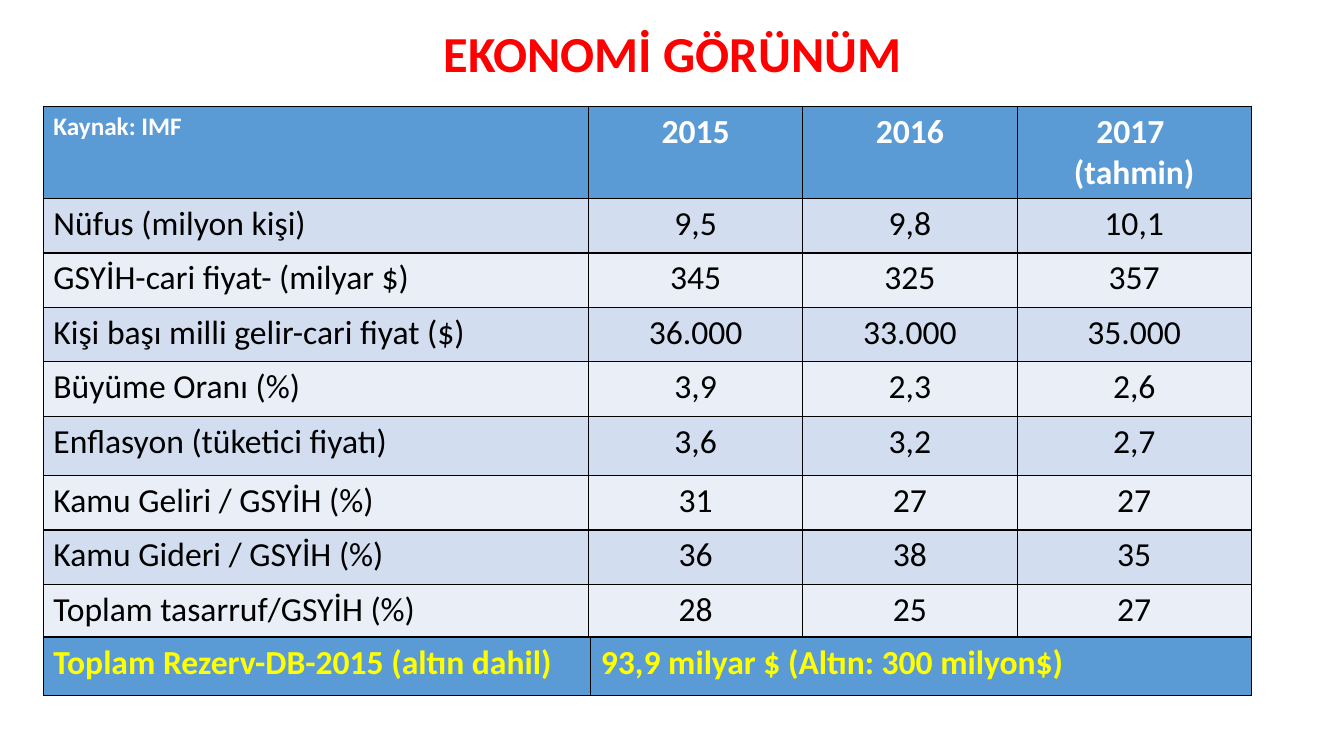
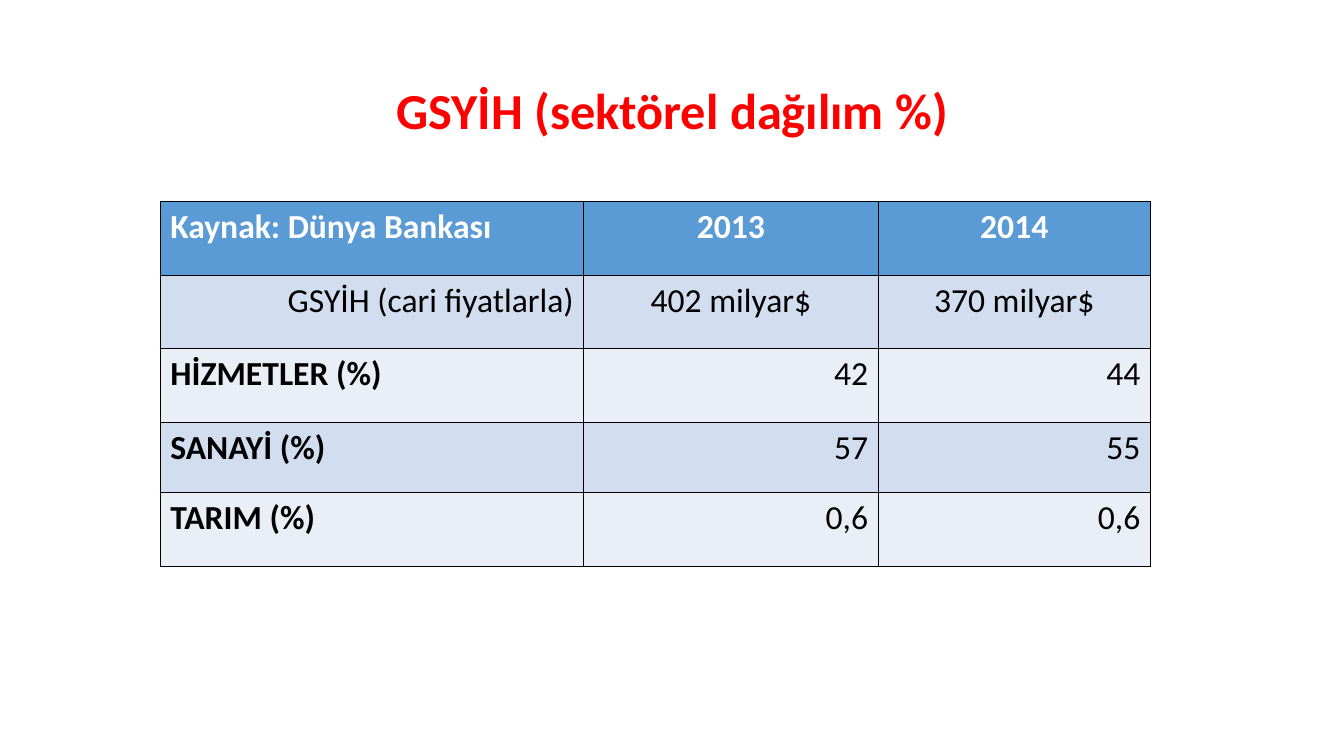
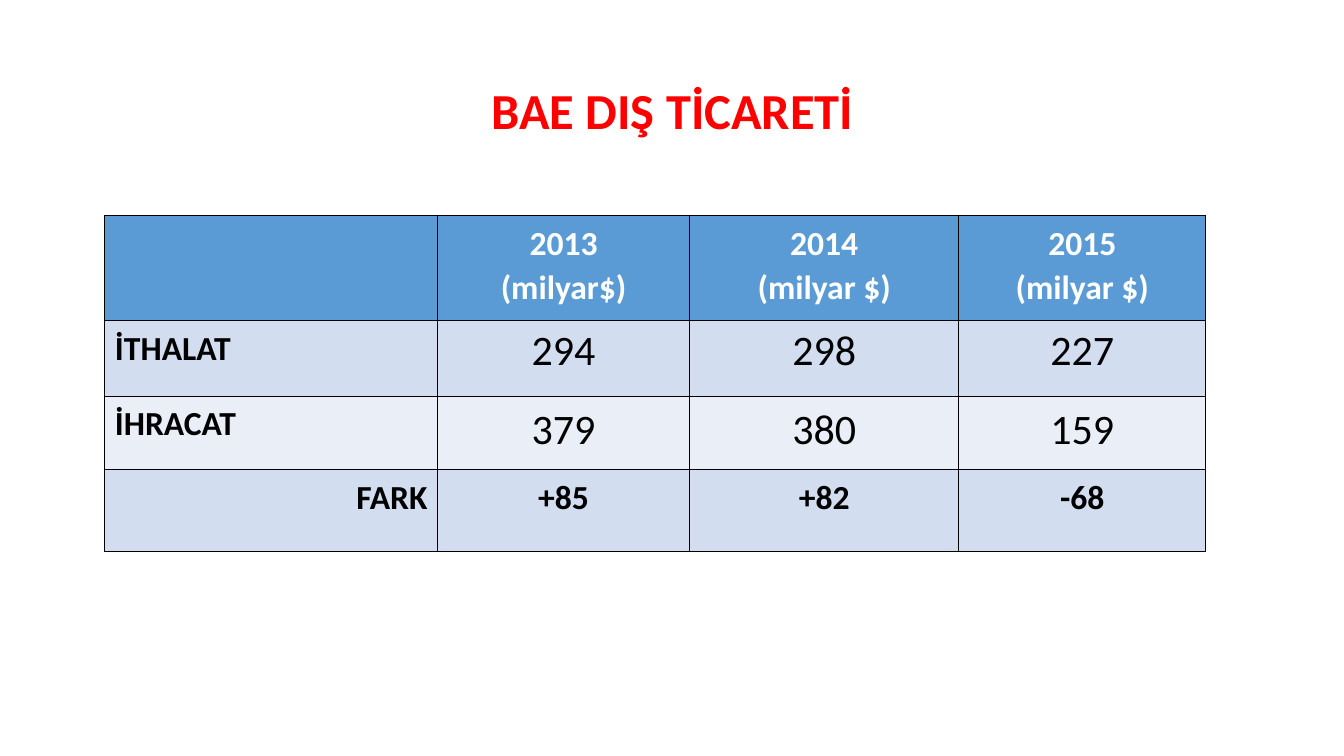
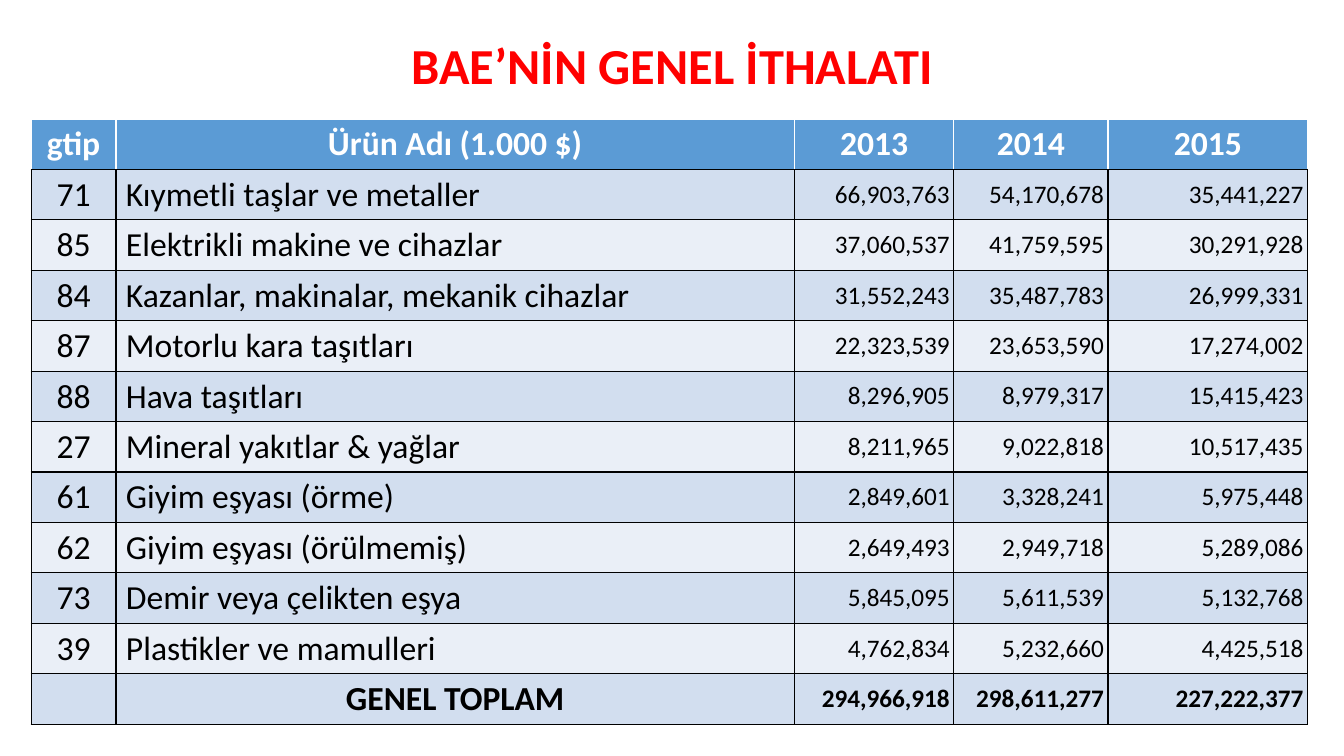
"""Build four slides of economic and trade tables."""
import dataclasses

import lxml.etree
import pptx
import pptx.dml.color
import pptx.enum.text
import pptx.oxml.ns
import pptx.slide
import pptx.table
import pptx.text.text
import pptx.util

Inches = pptx.util.Inches
Pt = pptx.util.Pt
ALIGN = pptx.enum.text.PP_ALIGN
ANCHOR = pptx.enum.text.MSO_ANCHOR

FONT = "Calibri"
COLORS = {
    "title": "FF0000",
    "header": "5B9BD5",
    "dark": "D2DEEF",
    "light": "EAEFF7",
    "black": "000000",
    "white": "FFFFFF",
    "yellow": "FFFF00",
}


@dataclasses.dataclass(frozen=True)
class Style:
    """Format of the text in one cell."""
    align: ALIGN = ALIGN.LEFT
    size: float = 24
    bold: bool = False
    color: str = "black"
    spacing: float = 1.0
    tight: bool = False


@dataclasses.dataclass(frozen=True)
class Row:
    """One table row with a style for each cell."""
    height: float
    fill: str
    cells: tuple[str, ...]
    styles: tuple[Style, ...]
    edge: str = "black"


@dataclasses.dataclass(frozen=True)
class Grid:
    """Place, column widths and rows of one table."""
    left: float
    top: float
    widths: tuple[float, ...]
    rows: list[Row]


@dataclasses.dataclass(frozen=True)
class Page:
    """One slide: its title, the title's place and its tables."""
    title: str
    title_top: float
    title_height: float
    grids: list[Grid]


LEFT = Style()
CENTER = Style(ALIGN.CENTER)
RIGHT = Style(ALIGN.RIGHT)
LEFT_BOLD = Style(bold=True)
HEAD_LEFT = Style(bold=True, color="white")
HEAD = Style(ALIGN.CENTER, bold=True, color="white")
SOURCE = Style(size=18, bold=True, color="white")
RESERVE = Style(bold=True, color="yellow")
TRADE_HEAD = dataclasses.replace(HEAD, spacing=1.07)
TRADE_LABEL = Style(bold=True, spacing=1.07)
TRADE_VALUE = Style(ALIGN.CENTER, size=30)
TRADE_LOOSE = dataclasses.replace(TRADE_VALUE, spacing=1.07)
DIFF_LABEL = dataclasses.replace(TRADE_LABEL, align=ALIGN.RIGHT)
DIFF_VALUE = dataclasses.replace(TRADE_LABEL, align=ALIGN.CENTER)
AMOUNT = Style(ALIGN.RIGHT, size=18, tight=True)
TOTAL = Style(ALIGN.CENTER, bold=True)
TOTAL_AMOUNT = dataclasses.replace(AMOUNT, bold=True)


def rgb(name: str) -> pptx.dml.color.RGBColor:
    """Return the named colour."""
    return pptx.dml.color.RGBColor.from_string(COLORS[name])


def band(index: int) -> str:
    """Return the fill name of a body row."""
    return ("dark", "light")[index % 2]


def write(tf: pptx.text.text.TextFrame, text: str, *, size: float, color: str,
          bold: bool, align: ALIGN, spacing: float) -> None:
    """Write each line of the text as a formatted paragraph."""
    for i, line in enumerate(text.split("\n")):
        p = tf.paragraphs[0] if i == 0 else tf.add_paragraph()
        p.alignment = align
        p.line_spacing = spacing
        r = p.add_run()
        r.text = line
        r.font.name = FONT
        r.font.size = Pt(size)
        r.font.bold = bold
        r.font.color.rgb = rgb(color)


def draw_title(s: pptx.slide.Slide, page: Page) -> None:
    """Draw the slide title."""
    sp = s.shapes.add_textbox(Inches(0.92), Inches(page.title_top),
                              Inches(11.5), Inches(page.title_height))
    tf = sp.text_frame
    tf.word_wrap = True
    tf.vertical_anchor = ANCHOR.MIDDLE
    write(tf, page.title, size=36, color="title", bold=True,
          align=ALIGN.CENTER, spacing=0.9)


def draw_borders(cell: pptx.table._Cell, edge: str) -> None:
    """Give a cell its edge colour, with a black bottom line."""
    qn = pptx.oxml.ns.qn
    tc_pr = cell._tc.get_or_add_tcPr()
    for side, color in (("L", edge), ("R", edge), ("T", edge), ("B", "black")):
        ln = lxml.etree.SubElement(tc_pr, qn(f"a:ln{side}"), w=str(Pt(1)))
        fill = lxml.etree.SubElement(ln, qn("a:solidFill"))
        lxml.etree.SubElement(fill, qn("a:srgbClr"), val=COLORS[color])


def draw_cell(cell: pptx.table._Cell, text: str, style: Style, row: Row) -> None:
    """Format and fill one cell."""
    draw_borders(cell, row.edge)
    cell.fill.solid()
    cell.fill.fore_color.rgb = rgb(row.fill)
    if style.tight:
        cell.vertical_anchor = ANCHOR.MIDDLE
        cell.margin_left = cell.margin_right = Inches(0.04)
        cell.margin_top = cell.margin_bottom = Inches(0.04)
    if text:
        write(cell.text_frame, text, size=style.size, color=style.color,
              bold=style.bold, align=style.align, spacing=style.spacing)


def draw_grid(s: pptx.slide.Slide, grid: Grid) -> None:
    """Draw one table."""
    height = sum(row.height for row in grid.rows)
    table = s.shapes.add_table(
        len(grid.rows), len(grid.widths), Inches(grid.left), Inches(grid.top),
        Inches(sum(grid.widths)), Inches(height)).table
    table.first_row = table.horz_banding = False
    for column, width in zip(table.columns, grid.widths):
        column.width = Inches(width)
    for i, row in enumerate(grid.rows):
        table.rows[i].height = Inches(row.height)
        for j, (text, style) in enumerate(zip(row.cells, row.styles)):
            draw_cell(table.cell(i, j), text, style, row)


OUTLOOK = [
    (0.54, ("Nüfus (milyon kişi)", "9,5", "9,8", "10,1")),
    (0.54, ("GSYİH-cari fiyat- (milyar $)", "345", "325", "357")),
    (0.54, ("Kişi başı milli gelir-cari fiyat ($)", "36.000", "33.000", "35.000")),
    (0.54, ("Büyüme Oranı (%)", "3,9", "2,3", "2,6")),
    (0.59, ("Enflasyon (tüketici fiyatı)", "3,6", "3,2", "2,7")),
    (0.54, ("Kamu Geliri / GSYİH (%)", "31", "27", "27")),
    (0.54, ("Kamu Gideri / GSYİH (%)", "36", "38", "35")),
    (0.53, ("Toplam tasarruf/GSYİH (%)", "28", "25", "27")),
]
IMPORTS = [
    ("71", "Kıymetli taşlar ve metaller", "66,903,763", "54,170,678", "35,441,227"),
    ("85", "Elektrikli makine ve cihazlar", "37,060,537", "41,759,595", "30,291,928"),
    ("84", "Kazanlar, makinalar, mekanik cihazlar", "31,552,243", "35,487,783",
     "26,999,331"),
    ("87", "Motorlu kara taşıtları", "22,323,539", "23,653,590", "17,274,002"),
    ("88", "Hava taşıtları", "8,296,905", "8,979,317", "15,415,423"),
    ("27", "Mineral yakıtlar & yağlar", "8,211,965", "9,022,818", "10,517,435"),
    ("61", "Giyim eşyası (örme)", "2,849,601", "3,328,241", "5,975,448"),
    ("62", "Giyim eşyası (örülmemiş)", "2,649,493", "2,949,718", "5,289,086"),
    ("73", "Demir veya çelikten eşya", "5,845,095", "5,611,539", "5,132,768"),
    ("39", "Plastikler ve mamulleri", "4,762,834", "5,232,660", "4,425,518"),
]

PAGES = [
    Page("EKONOMİ GÖRÜNÜM", 0.23, 0.65, [
        Grid(0.43, 1.06, (5.41, 2.12, 2.13, 2.32), [
            Row(0.91, "header", ("Kaynak: IMF", "2015", "2016", "2017 \n(tahmin)"),
                (SOURCE, HEAD, HEAD, HEAD)),
            *(Row(height, band(i), cells, (LEFT, CENTER, CENTER, CENTER))
              for i, (height, cells) in enumerate(OUTLOOK)),
        ]),
        Grid(0.43, 6.32, (5.43, 6.55), [
            Row(0.58, "header", ("Toplam Rezerv-DB-2015 (altın dahil)",
                                 "93,9 milyar $ (Altın: 300 milyon$)"),
                (RESERVE, RESERVE)),
        ]),
    ]),
    Page("GSYİH (sektörel dağılım %)", 0.4, 1.45, [
        Grid(1.59, 2, (4.2, 2.92, 2.7), [
            Row(0.73, "header", ("Kaynak: Dünya Bankası", "2013", "2014"),
                (HEAD_LEFT, HEAD, HEAD)),
            Row(0.73, "dark", ("GSYİH (cari fiyatlarla)", "402 milyar$", "370 milyar$"),
                (RIGHT, CENTER, CENTER)),
            Row(0.73, "light", ("HİZMETLER (%)", "42", "44"), (LEFT_BOLD, RIGHT, RIGHT)),
            Row(0.7, "dark", ("SANAYİ (%)", "57", "55"), (LEFT_BOLD, RIGHT, RIGHT)),
            Row(0.73, "light", ("TARIM (%)", "0,6", "0,6"), (LEFT_BOLD, RIGHT, RIGHT)),
        ]),
    ]),
    Page("BAE DIŞ TİCARETİ", 0.4, 1.45, [
        Grid(1.04, 2.14, (3.3, 2.5, 2.67, 2.45), [
            Row(1.04, "header", ("", "2013\n(milyar$)", "2014\n(milyar $)",
                                 "2015\n(milyar $)"), (TRADE_HEAD,) * 4),
            Row(0.75, "dark", ("İTHALAT", "294", "298", "227"),
                (TRADE_LABEL, *[TRADE_VALUE] * 3)),
            Row(0.73, "light", ("İHRACAT", "379", "380", "159"),
                (TRADE_LABEL, *[TRADE_LOOSE] * 3)),
            Row(0.81, "dark", ("FARK", "+85", "+82", "-68"),
                (DIFF_LABEL, *[DIFF_VALUE] * 3)),
        ]),
    ]),
    Page("BAE’NİN GENEL İTHALATI", 0.4, 0.55, [
        Grid(0.31, 1.18, (0.84, 6.73, 1.58, 1.53, 1.98), [
            Row(0.5, "header", ("gtip", "Ürün Adı (1.000 $)", "2013", "2014", "2015"),
                (HEAD,) * 5, edge="white"),
            *(Row(0.5, band(i), cells, (CENTER, LEFT, *[AMOUNT] * 3))
              for i, cells in enumerate(IMPORTS)),
            Row(0.5, "dark", ("", "GENEL TOPLAM", "294,966,918", "298,611,277",
                              "227,222,377"), (TOTAL, TOTAL, *[TOTAL_AMOUNT] * 3)),
        ]),
    ]),
]


def main() -> None:
    """Build and save the presentation."""
    prs = pptx.Presentation()
    prs.slide_width = Inches(13.33)
    prs.slide_height = Inches(7.5)
    for page in PAGES:
        s = prs.slides.add_slide(prs.slide_layouts[6])
        draw_title(s, page)
        for grid in page.grids:
            draw_grid(s, grid)
    prs.save("out.pptx")


if __name__ == "__main__":
    main()
